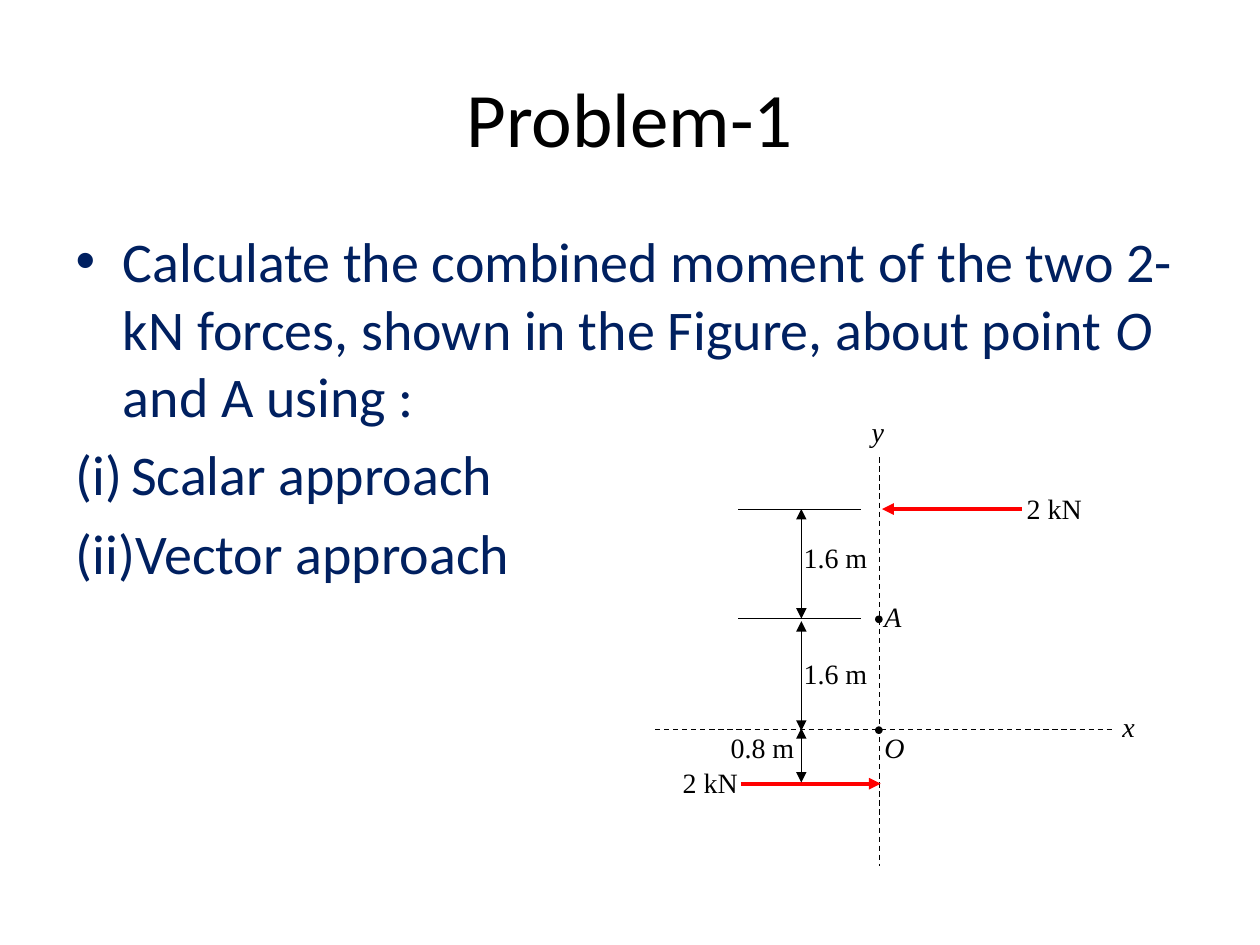
from lxml import etree
from pptx import Presentation
from pptx.dml.color import RGBColor
from pptx.enum import dml, shapes, text
from pptx.oxml.ns import qn
from pptx.util import Inches, Pt

BLACK = RGBColor(0x00, 0x00, 0x00)
NAVY = RGBColor(0x00, 0x20, 0x60)
RED = RGBColor(0xFF, 0x00, 0x00)

# Levels of the figure
AXIS_X, DIM_X = 6.98, 6.36
TOP_Y, A_Y, O_Y, LOW_Y = 4.04, 4.91, 5.79, 6.22

prs = Presentation()
prs.slide_width, prs.slide_height = Inches(10), Inches(7.5)
s = prs.slides.add_slide(prs.slide_layouts[1])


def add_run(p, words, font, size, color, italic=False):
    r = p.add_run()
    r.text = words
    r.font.name, r.font.size, r.font.italic = font, Pt(size), italic
    r.font.color.rgb = color


def add_line(x1, y1, x2, y2, color=BLACK, width=0.75, dash=False, ends=()):
    """Draw a straight line; ends names the arrowheads, headEnd before tailEnd."""
    c = s.shapes.add_connector(shapes.MSO_CONNECTOR.STRAIGHT,
                               Inches(x1), Inches(y1), Inches(x2), Inches(y2))
    c.line.color.rgb = color
    c.line.width = Pt(width)
    if dash:
        c.line.dash_style = dml.MSO_LINE.DASH
    ln = c.line._get_or_add_ln()
    for end in ends:
        etree.SubElement(ln, qn("a:" + end), type="triangle")
    etree.SubElement(c._element.spPr, qn("a:effectLst"))


# Title
title = s.shapes.title
title.left, title.top = Inches(0.5), Inches(0.3)
title.width, title.height = Inches(9), Inches(1.25)
p = title.text_frame.paragraphs[0]
p.alignment = text.PP_ALIGN.CENTER
add_run(p, "Problem-1", "Calibri", 44, BLACK)

# Question and its two parts
body = s.placeholders[1]
body.left, body.top = Inches(0.5), Inches(1.75)
body.width, body.height = Inches(9), Inches(4.95)
tf = body.text_frame
p = tf.paragraphs[0]
for words, italic in [
    ("Calculate the combined moment of the two 2-kN forces, "
     "shown in the Figure, about point ", False),
    ("O", True),
    (" and A using :", False),
]:
    add_run(p, words, "Calibri", 32, NAVY, italic)

for approach in ("Scalar approach", "Vector approach"):
    p = tf.add_paragraph()
    add_run(p, approach, "Calibri", 32, NAVY)
    pPr = p._p.get_or_add_pPr()
    pPr.set("marL", str(Inches(0.44)))
    pPr.set("indent", str(-Inches(0.44)))
    etree.SubElement(pPr, qn("a:buFont"), typeface="+mj-lt")
    etree.SubElement(pPr, qn("a:buAutoNum"), type="romanLcParenBoth")

# Axes
add_line(AXIS_X, 3.63, AXIS_X, 6.87, dash=True)
add_line(5.2, O_Y, 8.83, O_Y, dash=True)

# Forces
add_line(8.11, TOP_Y, 7, TOP_Y, RED, 2.25, ends=["tailEnd"])
add_line(5.88, LOW_Y, 6.99, LOW_Y, RED, 2.25, ends=["tailEnd"])

# Points A and O
for y in (A_Y, O_Y):
    dot = s.shapes.add_shape(shapes.MSO_SHAPE.OVAL, Inches(AXIS_X - 0.03),
                             Inches(y - 0.02), Inches(0.05), Inches(0.05))
    dot.shadow.inherit = False
    dot.fill.solid()
    dot.fill.fore_color.rgb = BLACK
    dot.line.color.rgb = BLACK
    dot.line.width = Pt(0.75)

# Dimensions
for y in (A_Y, TOP_Y):
    add_line(5.86, y, 6.83, y, width=0.25)
for y1, y2 in [(TOP_Y, A_Y), (A_Y + 0.02, O_Y + 0.01), (O_Y - 0.01, LOW_Y - 0.01)]:
    add_line(DIM_X, y1, DIM_X, y2, ends=["headEnd", "tailEnd"])

# Labels
for words, x, y, w, italic in [
    ("2 kN", 8.05, 3.85, 0.86, False),
    ("2 kN", 5.32, 6.03, 0.86, False),
    ("y", 6.82, 3.24, 0.51, True),
    ("x", 8.81, 5.58, 0.51, True),
    ("O", 6.92, 5.75, 0.51, True),
    ("A", 6.92, 4.71, 0.51, True),
    ("0.8 m", 5.7, 5.75, 1.12, False),
    ("1.6 m", 6.28, 4.24, 0.86, False),
    ("1.6 m", 6.28, 5.16, 0.86, False),
]:
    label = s.shapes.add_textbox(Inches(x), Inches(y), Inches(w), Inches(0.43))
    label.text_frame.word_wrap = True
    p = label.text_frame.paragraphs[0]
    p.space_after = Pt(10)
    add_run(p, words, "Times New Roman", 16, BLACK, italic)

prs.save("out.pptx")
